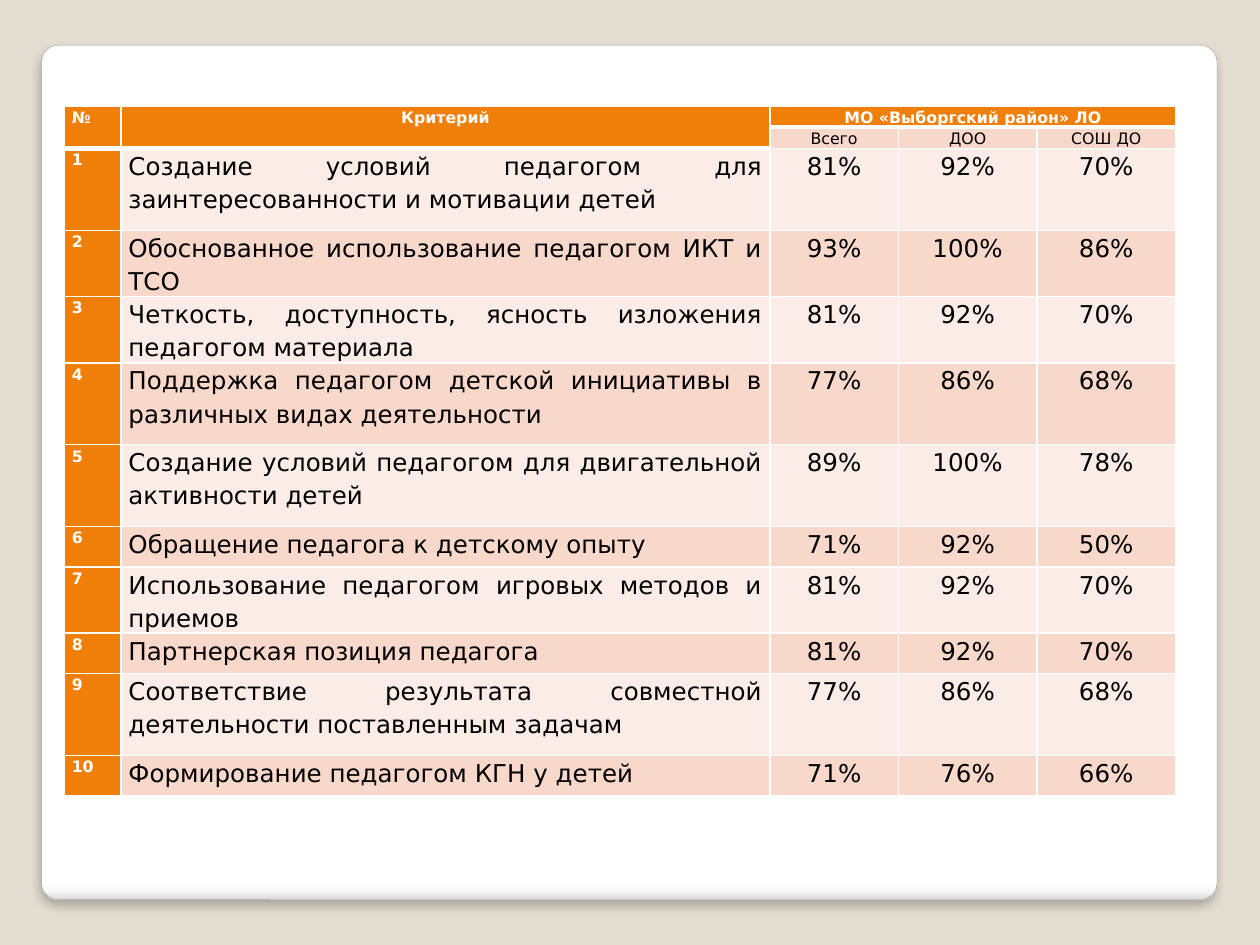
from dataclasses import dataclass

from lxml.etree import SubElement
from pptx import Presentation
from pptx.dml.color import RGBColor
from pptx.enum.shapes import MSO_SHAPE as Shape
from pptx.enum.text import PP_ALIGN as Align
from pptx.oxml.ns import qn
from pptx.util import Inches, Pt


@dataclass(frozen=True)
class Theme:
    font: str = "DejaVu Sans"
    small: int = 9
    body: int = 14
    line_spacing: float = 1.15
    background: str = "E3DED1"
    panel_line: str = "A4A4A4"
    accent: str = "F07F09"
    light_band: str = "FCECE7"
    dark_band: str = "F9D8CC"
    white: str = "FFFFFF"
    black: str = "000000"
    panel_stops: tuple = ((0, "FFFFFF"), (98, "FFFFFF"), (99, "F7F7F7"), (100, "DADADA"))


THEME = Theme()
COLUMN_WIDTHS = (0.45, 5.15, 1.02, 1.1, 1.1)
HEADER_HEIGHT, ONE_LINE, TWO_LINES, TALL = 0.16, 0.32, 0.49, 0.65
HEADINGS = ("№", "Критерий", "МО «Выборгский район» ЛО")
SUBHEADINGS = ("Всего", "ДОО", "СОШ ДО")
CRITERIA = (
    ("Создание условий педагогом для заинтересованности и мотивации детей", TALL, (81, 92, 70)),
    ("Обоснованное использование педагогом ИКТ и ТСО", TWO_LINES, (93, 100, 86)),
    ("Четкость, доступность, ясность изложения педагогом материала", TWO_LINES, (81, 92, 70)),
    ("Поддержка педагогом детской инициативы в различных видах деятельности", TALL, (77, 86, 68)),
    ("Создание условий педагогом для двигательной активности детей", TALL, (89, 100, 78)),
    ("Обращение педагога к детскому опыту", ONE_LINE, (71, 92, 50)),
    ("Использование педагогом игровых методов и приемов", TWO_LINES, (81, 92, 70)),
    ("Партнерская позиция педагога", ONE_LINE, (81, 92, 70)),
    ("Соответствие результата совместной деятельности поставленным задачам", TALL, (77, 86, 68)),
    ("Формирование педагогом КГН у детей", ONE_LINE, (71, 76, 66)),
)


def rgb(value):
    return RGBColor.from_string(value)


def set_background(page):
    page.background.fill.solid()
    page.background.fill.fore_color.rgb = rgb(THEME.background)


def add_panel(page):
    panel = page.shapes.add_shape(
        Shape.ROUNDED_RECTANGLE, Inches(0.33), Inches(0.36), Inches(9.33), Inches(6.78))
    panel.adjustments[0] = 0.02
    panel.line.color.rgb = rgb(THEME.panel_line)
    panel.line.width = Pt(0.16)
    panel.fill.gradient()
    panel.fill.gradient_angle = 270
    properties = panel.element.spPr
    stops = properties.find(f"{qn('a:gradFill')}/{qn('a:gsLst')}")
    for stop in list(stops):
        stops.remove(stop)
    for position, color in THEME.panel_stops:
        stop = SubElement(stops, qn("a:gs"), pos=str(position * 1000))
        SubElement(stop, qn("a:srgbClr"), val=color)
    panel.shadow.inherit = False
    shadow = SubElement(
        properties.find(qn("a:effectLst")), qn("a:outerShdw"),
        blurRad=str(Pt(6)), dist=str(Pt(4)), dir="5400000", algn="t", rotWithShape="0")
    color = SubElement(shadow, qn("a:srgbClr"), val=THEME.black)
    SubElement(color, qn("a:alpha"), val="25000")


def add_borders(cell, bottom):
    properties = cell._tc.get_or_add_tcPr()
    for side, width in (("L", 1), ("R", 1), ("T", 1), ("B", bottom)):
        line = SubElement(properties, qn(f"a:ln{side}"), w=str(Pt(width)))
        fill = SubElement(line, qn("a:solidFill"))
        SubElement(fill, qn("a:srgbClr"), val=THEME.white)


def format_cell(cell, fill, bottom=1):
    cell.margin_left = cell.margin_right = Inches(0.06)
    cell.margin_top = cell.margin_bottom = 0
    add_borders(cell, bottom)
    cell.fill.solid()
    cell.fill.fore_color.rgb = rgb(fill)


def write(cell, text, align=Align.CENTER, size=THEME.small, color=THEME.black, bold=False):
    para = cell.text_frame.paragraphs[0]
    para.alignment = align
    para.line_spacing = THEME.line_spacing
    span = para.add_run()
    span.text = text
    span.font.name = THEME.font
    span.font.size = Pt(size)
    span.font.bold = bold
    span.font.color.rgb = rgb(color)


def fill_header(table):
    for column in range(len(COLUMN_WIDTHS)):
        merged_down = column < 2
        format_cell(table.cell(0, column), THEME.accent, bottom=3)
        format_cell(table.cell(1, column), THEME.accent if merged_down else THEME.dark_band,
                    bottom=3 if merged_down else 1)
    for column, text in enumerate(HEADINGS):
        end = (1, column) if column < 2 else (0, 4)
        table.cell(0, column).merge(table.cell(*end))
        write(table.cell(0, column), text, Align.CENTER if column else Align.JUSTIFY,
              color=THEME.white, bold=True)
    for column, text in enumerate(SUBHEADINGS, 2):
        write(table.cell(1, column), text)


def fill_criterion(table, number, criterion, values):
    cells = table.rows[number + 1].cells
    band = THEME.light_band if number % 2 else THEME.dark_band
    for column, cell in enumerate(cells):
        format_cell(cell, band if column else THEME.accent)
    write(cells[0], str(number), Align.JUSTIFY, color=THEME.white, bold=True)
    write(cells[1], criterion, Align.JUSTIFY, THEME.body)
    for column, value in enumerate(values, 2):
        write(cells[column], f"{value}%", size=THEME.body)


def add_criteria_table(page):
    heights = [HEADER_HEIGHT] * 2 + [height for _, height, _ in CRITERIA]
    table = page.shapes.add_table(
        len(heights), len(COLUMN_WIDTHS), Inches(0.51), Inches(0.84),
        Inches(sum(COLUMN_WIDTHS)), Inches(sum(heights))).table
    for column, width in zip(table.columns, COLUMN_WIDTHS):
        column.width = Inches(width)
    for row, height in zip(table.rows, heights):
        row.height = Inches(height)
    fill_header(table)
    for number, (criterion, _, values) in enumerate(CRITERIA, 1):
        fill_criterion(table, number, criterion, values)


def main():
    deck = Presentation()
    deck.slide_width, deck.slide_height = Inches(10), Inches(7.5)
    page = deck.slides.add_slide(deck.slide_layouts[6])
    set_background(page)
    add_panel(page)
    add_criteria_table(page)
    deck.save("out.pptx")


if __name__ == "__main__":
    main()
